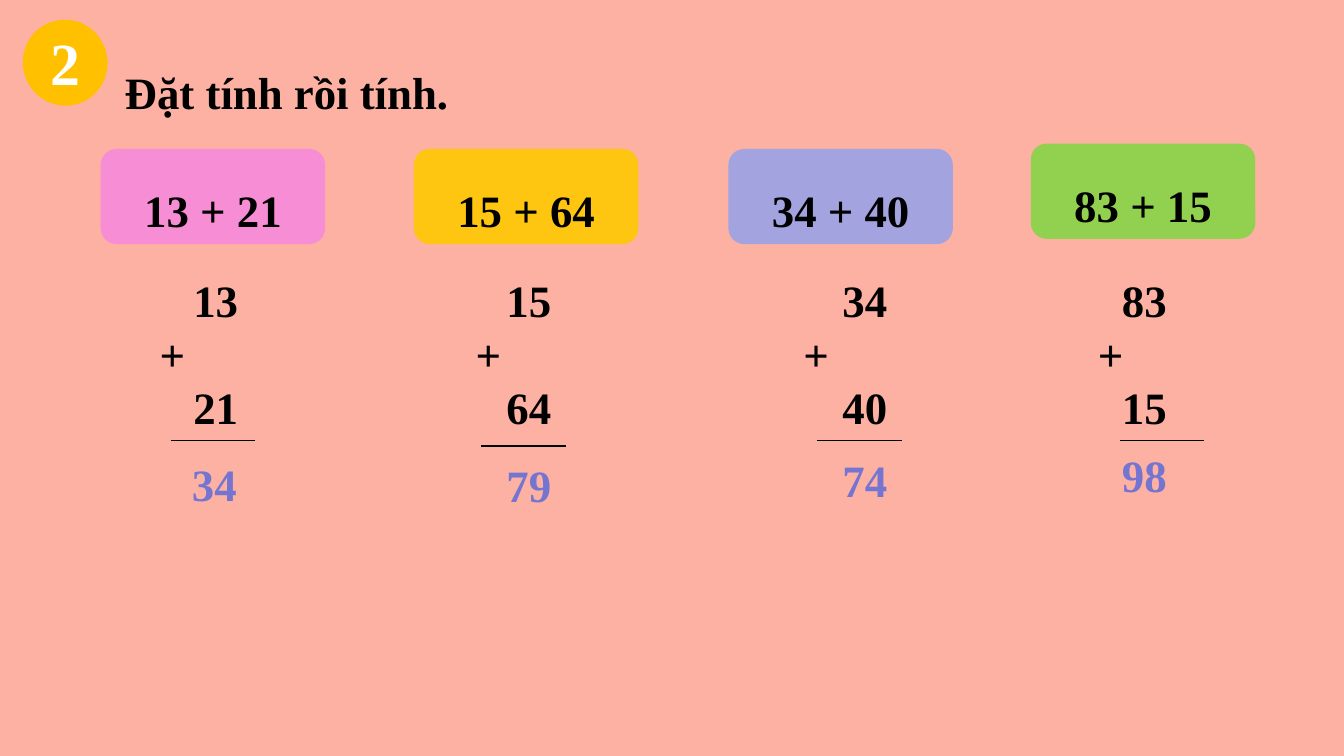
import pptx
import pptx.dml.color
import pptx.enum.shapes
import pptx.enum.text
import pptx.oxml.ns
import pptx.util
from lxml import etree

RGBColor = pptx.dml.color.RGBColor
Shape = pptx.enum.shapes.MSO_SHAPE
Align = pptx.enum.text.PP_ALIGN
Anchor = pptx.enum.text.MSO_ANCHOR

SALMON = RGBColor(0xFC, 0xB1, 0xA2)
AMBER = RGBColor(0xFF, 0xC0, 0x00)
PINK = RGBColor(0xF7, 0x8D, 0xD4)
GOLD = RGBColor(0xFF, 0xC6, 0x11)
LILAC = RGBColor(0xA3, 0xA3, 0xE0)
GREEN = RGBColor(0x92, 0xD0, 0x50)
VIOLET = RGBColor(0x75, 0x75, 0xD1)
BLACK = RGBColor(0, 0, 0)
WHITE = RGBColor(0xFF, 0xFF, 0xFF)

WIDTH = pptx.util.Inches(10)
HEIGHT = pptx.util.Inches(5.625)
TEXT_LEFT = 2.7
CARD_SIZE = (16.7, 12.6)
RULE_LENGTH = 6.3

# first, second, card colour, card left, card top, digits, plus, rule left, rule top, sum left, sum top
SUMS = [
    (13, 21, PINK, 7.5, 19.7, 14.4, 11.9, 12.7, 58.3, 13.3, 59.6),
    (15, 64, GOLD, 30.8, 19.7, 37.7, 35.4, 35.8, 59.0, 36.7, 59.7),
    (34, 40, LILAC, 54.2, 19.7, 62.7, 59.8, 60.8, 58.3, 61.7, 59.0),
    (83, 15, GREEN, 76.7, 19.0, 83.5, 81.7, 83.3, 58.3, 82.5, 58.3),
]


def across(percent):
    """Return a share of the slide's width."""
    return round(WIDTH * percent / 100)


def down(percent):
    """Return a share of the slide's height."""
    return round(HEIGHT * percent / 100)


def area(left, top, width, height):
    """Return a rectangle given in percent of the slide."""
    return across(left), down(top), across(width), down(height)


def write_para(para, text, color=BLACK, size=24, **layout):
    """Write one bold paragraph with the given layout values."""
    for name, value in layout.items():
        setattr(para, name, value)
    span = para.add_run()
    span.text = text
    values = {"name": "Times New Roman", "size": pptx.util.Pt(size), "bold": True}
    for name, value in values.items():
        setattr(span.font, name, value)
    span.font.color.rgb = color


def add_panel(page, kind, place, color, rotation=0):
    """Add a filled shape without outline or shadow."""
    panel = page.shapes.add_shape(kind, *place)
    panel.shadow.inherit = False
    panel.fill.solid()
    panel.fill.fore_color.rgb = color
    panel.line.fill.background()
    panel.rotation = rotation
    return panel


def add_label(page, place, text, **style):
    """Add a wrapping text box with one paragraph."""
    box = page.shapes.add_textbox(*place)
    box.text_frame.word_wrap = True
    write_para(box.text_frame.paragraphs[0], text, **style)


def add_card(page, text, left, top, color):
    """Add a rounded card that shows an exercise."""
    card = add_panel(page, Shape.ROUNDED_RECTANGLE, area(left, top, *CARD_SIZE), color)
    card.text_frame.vertical_anchor = Anchor.MIDDLE
    write_para(card.text_frame.paragraphs[0], text, alignment=Align.CENTER, line_spacing=1.5)


def add_rule(page, left, top):
    """Add the line above a result."""
    rule = page.shapes.add_connector(
        pptx.enum.shapes.MSO_CONNECTOR.STRAIGHT,
        across(left), down(top), across(left + RULE_LENGTH), down(top))
    rule.line.color.rgb = BLACK
    rule.line.width = pptx.util.Pt(0.75)
    etree.SubElement(rule.element.spPr, pptx.oxml.ns.qn("a:effectLst"))


def set_tabs(para, stops):
    """Set left tab stops at shares of the slide's width."""
    tabs = etree.SubElement(para._p.get_or_add_pPr(), pptx.oxml.ns.qn("a:tabLst"))
    for stop in stops:
        etree.SubElement(tabs, pptx.oxml.ns.qn("a:tab"),
                         pos=str(across(stop - TEXT_LEFT)), algn="l")


def add_working(page):
    """Add the rows of the column sums, aligned with tab stops."""
    firsts, seconds, _, _, _, digits, pluses, *_ = zip(*SUMS)
    rows = [(firsts, digits), ("+" * len(SUMS), pluses), (seconds, digits)]
    box = page.shapes.add_textbox(*area(1.7, 35.2, 100, 30.6))
    frame = box.text_frame
    frame.word_wrap = True
    for index, (entries, stops) in enumerate(rows):
        para = frame.add_paragraph() if index else frame.paragraphs[0]
        set_tabs(para, stops)
        write_para(para, "".join(f"\t{entry}" for entry in entries))


def main():
    """Build the addition exercise slide."""
    deck = pptx.Presentation()
    deck.slide_width, deck.slide_height = WIDTH, HEIGHT
    page = deck.slides.add_slide(deck.slide_layouts[6])
    add_panel(page, Shape.RECTANGLE, area(0, 0, 100, 100), SALMON)
    add_panel(page, Shape.OVAL, area(1.7, 2.6, 6.3, 11.4), AMBER, 163.6)
    add_panel(page, Shape.OVAL, area(2.3, 4.1, 5.3, 9.6), AMBER, 16.1)
    add_label(page, area(2.5, 2.6, 4.8, 11.4), "2",
              color=WHITE, size=32, alignment=Align.CENTER)
    add_label(page, area(8.3, 4.1, 91.7, 12.6), "Đặt tính rồi tính.", line_spacing=1.5)
    for first, second, color, left, top, *_ in SUMS:
        add_card(page, f"{first} + {second}", left, top, color)
    add_working(page)
    for first, second, *_, rule_left, rule_top, left, top in SUMS:
        add_label(page, area(left, top, 6.7, 9), str(first + second), color=VIOLET)
        add_rule(page, rule_left, rule_top)
    deck.save("out.pptx")


if __name__ == "__main__":
    main()
